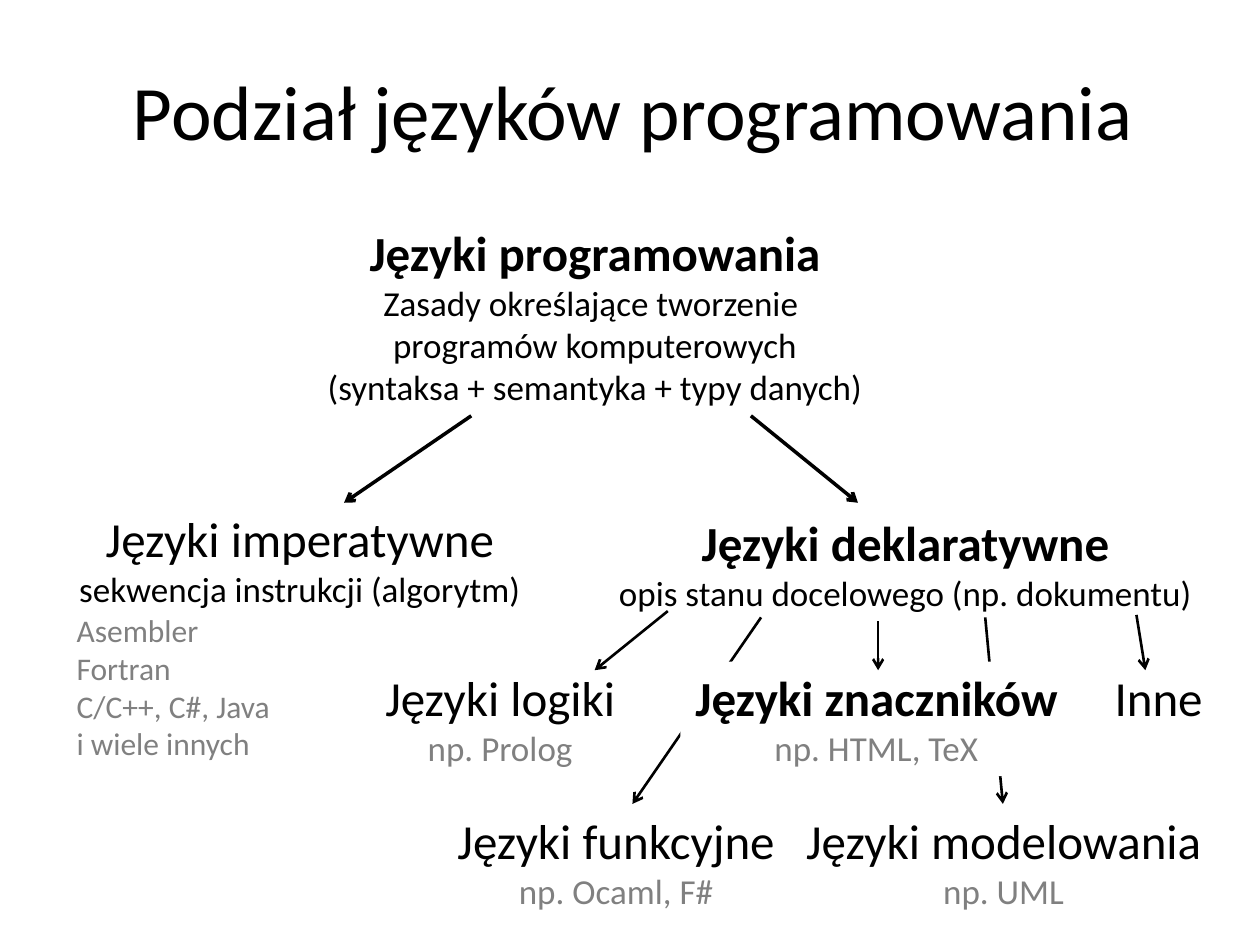
from dataclasses import dataclass

from lxml import etree
from pptx import Presentation
from pptx.dml.color import RGBColor
from pptx.enum.shapes import MSO_CONNECTOR
from pptx.enum.text import MSO_ANCHOR, MSO_AUTO_SIZE, PP_ALIGN
from pptx.oxml.ns import qn
from pptx.util import Pt

LEFT, CENTER = PP_ALIGN.LEFT, PP_ALIGN.CENTER
MIDDLE = MSO_ANCHOR.MIDDLE
GROW = MSO_AUTO_SIZE.SHAPE_TO_FIT_TEXT
STRAIGHT = MSO_CONNECTOR.STRAIGHT


@dataclass(frozen=True)
class Theme:
    font: str = "Calibri"
    ink: RGBColor = RGBColor(0, 0, 0)
    gray: RGBColor = RGBColor(0x80, 0x80, 0x80)
    paper: RGBColor = RGBColor(255, 255, 255)
    title: int = 44
    head: int = 28
    note: int = 20
    list: int = 18
    thick: float = 2
    thin: float = 1.5


class Board:
    def __init__(self, slide, theme):
        self.slide = slide
        self.theme = theme

    def style(self, para, text, size, color, bold=False, align=CENTER):
        para.text = text
        para.alignment = align
        font = para.font
        font.name = self.theme.font
        font.size = Pt(size)
        font.bold = bold
        font.color.rgb = color

    def title(self, text, box):
        shape = self.slide.shapes.title
        shape.left, shape.top, shape.width, shape.height = map(Pt, box)
        frame = shape.text_frame
        frame.vertical_anchor = MIDDLE
        self.style(frame.paragraphs[0], text, self.theme.title, self.theme.ink)

    def frame(self, box, fill=None):
        shape = self.slide.shapes.add_textbox(*map(Pt, box))
        if fill is not None:
            shape.fill.solid()
            shape.fill.fore_color.rgb = fill
        frame = shape.text_frame
        frame.word_wrap = False
        frame.auto_size = GROW
        return frame

    def node(self, box, head, note=None, color=None, bold=False, fill=None):
        theme = self.theme
        frame = self.frame(box, fill)
        self.style(frame.paragraphs[0], head, theme.head, theme.ink, bold)
        if note:
            self.style(frame.add_paragraph(), note, theme.note, color or theme.gray)

    def list(self, box, items):
        frame = self.frame(box)
        for i, item in enumerate(items):
            para = frame.add_paragraph() if i else frame.paragraphs[0]
            self.style(para, item, self.theme.list, self.theme.gray, align=LEFT)

    def arrow(self, start, end, width):
        line = self.slide.shapes.add_connector(STRAIGHT, *map(Pt, (*start, *end)))
        line.line.color.rgb = self.theme.ink
        line.line.width = Pt(width)
        tip = etree.SubElement(line.line._get_or_add_ln(), qn("a:tailEnd"))
        tip.set("type", "arrow")
        etree.SubElement(line._element.spPr, qn("a:effectLst"))


def main():
    deck = Presentation()
    deck.slide_width, deck.slide_height = Pt(720), Pt(540)
    theme = Theme()
    board = Board(deck.slides.add_slide(deck.slide_layouts[5]), theme)
    ink, thick, thin = theme.ink, theme.thick, theme.thin
    tall, row, low = 65.5, 378, 459.4

    board.title("Podział języków programowania", (14.4, 36.7, 694.8, 51.8))
    board.node(
        (178.6, 123.8, 322.6, 113.8),
        "Języki programowania",
        "Zasady określające tworzenie \vprogramów komputerowych\v"
        "(syntaksa + semantyka + typy danych)",
        ink,
        True,
    )
    board.node((36.7, 287.3, 269.3, tall), "Języki imperatywne",
               "sekwencja instrukcji (algorytm)", ink)
    board.node((344.9, 289.4, 344.9, tall), "Języki deklaratywne",
               "opis stanu docelowego (np. dokumentu)", ink, True)
    board.list((36.7, 345.6, 126.7, 94.3),
               ("Asembler", "Fortran", "C/C++, C#, Java", "i wiele innych"))

    for start, end in (((269.3, 237.6), (196.6, 287.3)),
                       ((429.1, 237.6), (490.3, 287.3))):
        board.arrow(start, end, thick)

    leaves = (
        ((212.4, row, 146.9, tall), "Języki logiki", "np. Prolog",
         (381.6, 349.2), (339.8, 383)),
        ((253.4, low, 197.3, tall), "Języki funkcyjne", "np. Ocaml, F#",
         (434.9, 352.8), (361.4, low)),
        ((452.2, low, 242.6, tall), "Języki modelowania", "np. UML",
         (563, 352.8), (573.1, low)),
        ((629.3, row, 65.5, 41), "Inne", None,
         (649.4, 351.4), (654.5, 383)),
    )
    for box, head, note, start, end in leaves:
        board.node(box, head, note)
        board.arrow(start, end, thin)

    board.node((388.8, row, 223.9, tall), "Języki znaczników",
               "np. HTML, TeX", bold=True, fill=theme.paper)
    board.arrow((501.8, 355), (501.8, 383), thin)

    deck.save("out.pptx")


if __name__ == "__main__":
    main()
